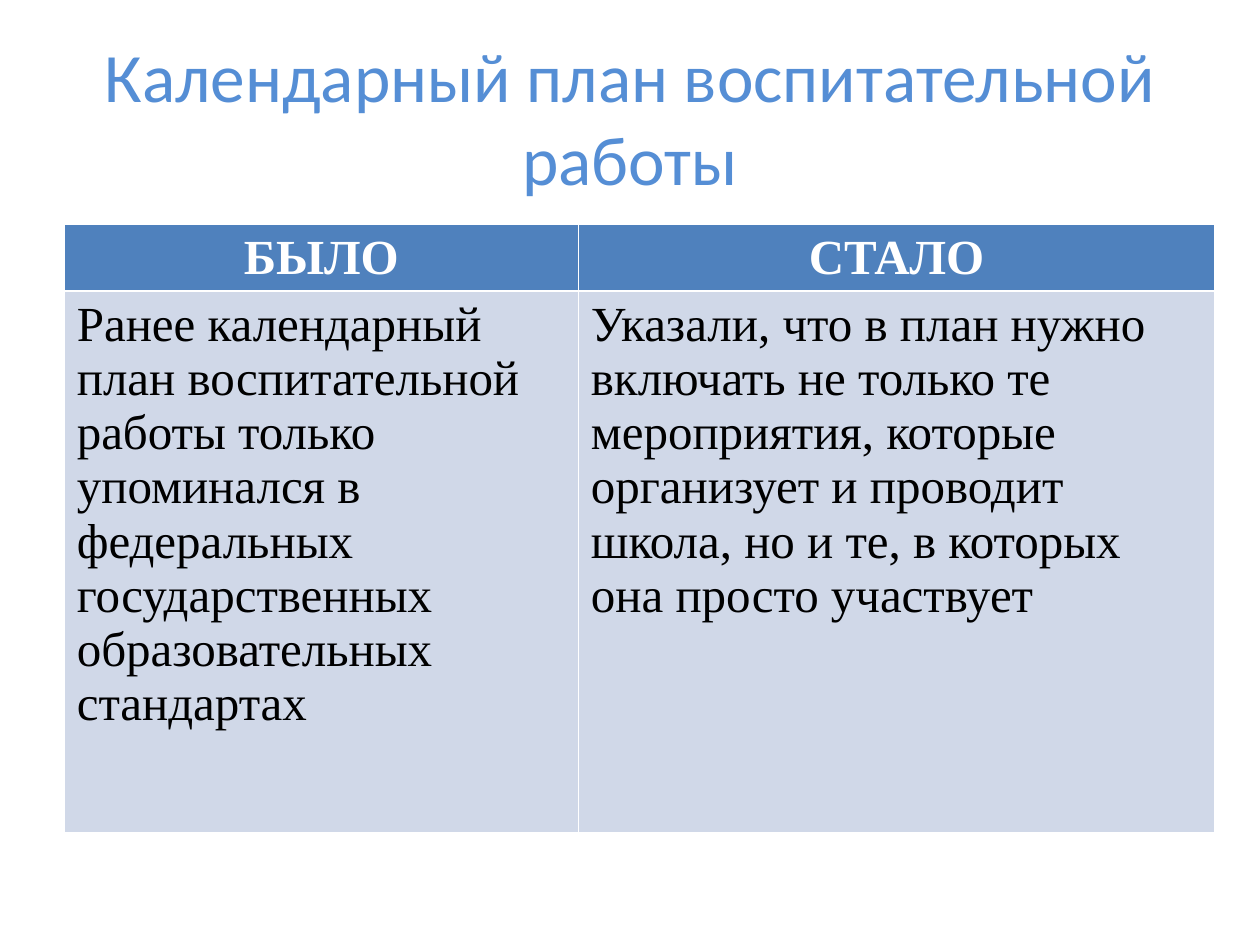
from dataclasses import dataclass

from pptx import Presentation
from pptx.dml.color import RGBColor
from pptx.enum.text import MSO_ANCHOR, PP_ALIGN
from pptx.util import Inches, Pt

HUES = {
    "title": "558ED5",
    "head": "4F81BD",
    "body": "D0D8E8",
    "white": "FFFFFF",
    "black": "000000",
}


@dataclass
class Style:
    font: dict
    hue: str
    align: PP_ALIGN


@dataclass
class Row:
    high: float
    fill: str
    style: Style
    texts: tuple[str, ...]


TITLE = Style({"name": "Calibri", "size": Pt(39.6), "bold": False}, "title", PP_ALIGN.CENTER)
HEAD = Style({"name": "Times New Roman", "size": Pt(28), "bold": True}, "white", PP_ALIGN.CENTER)
BODY = Style({**HEAD.font, "bold": False}, "black", PP_ALIGN.LEFT)

WIDTHS = (4.08, 5.05)
ROWS = (
    Row(0.5, "head", HEAD, ("БЫЛО", "СТАЛО")),
    Row(4.3, "body", BODY, (
        "Ранее календарный план воспитательной работы только упоминался "
        "в федеральных государственных образовательных стандартах",
        "Указали, что в план нужно включать не только те мероприятия, "
        "которые организует и проводит школа, но и те, в которых она просто участвует",
    )),
)


def tint(name: str) -> RGBColor:
    return RGBColor.from_string(HUES[name])


def write(frame, text: str, style: Style) -> None:
    para = frame.paragraphs[0]
    para.alignment = style.align
    run = para.add_run()
    run.text = text
    for key, value in style.font.items():
        setattr(run.font, key, value)
    run.font.color.rgb = tint(style.hue)


def add_title(slide, text: str) -> None:
    box = slide.shapes.add_textbox(Inches(0.5), Inches(0.3), Inches(9), Inches(1.25))
    frame = box.text_frame
    for key, value in {"word_wrap": True, "vertical_anchor": MSO_ANCHOR.MIDDLE}.items():
        setattr(frame, key, value)
    write(frame, text, TITLE)


def add_grid(slide, rows: tuple[Row, ...]) -> None:
    high = sum(row.high for row in rows)
    table = slide.shapes.add_table(
        len(rows), len(WIDTHS), Inches(0.51), Inches(1.78),
        Inches(sum(WIDTHS)), Inches(high),
    ).table
    for col, width in zip(table.columns, WIDTHS):
        col.width = Inches(width)
    for line, row in zip(table.rows, rows):
        line.height = Inches(row.high)
        for cell, text in zip(line.cells, row.texts):
            cell.fill.solid()
            cell.fill.fore_color.rgb = tint(row.fill)
            write(cell.text_frame, text, row.style)


def main() -> None:
    deck = Presentation()
    deck.slide_width, deck.slide_height = Inches(10), Inches(7.5)
    slide = deck.slides.add_slide(deck.slide_layouts[6])
    add_grid(slide, ROWS)
    add_title(slide, "Календарный план воспитательной работы")
    deck.save("out.pptx")


if __name__ == "__main__":
    main()
